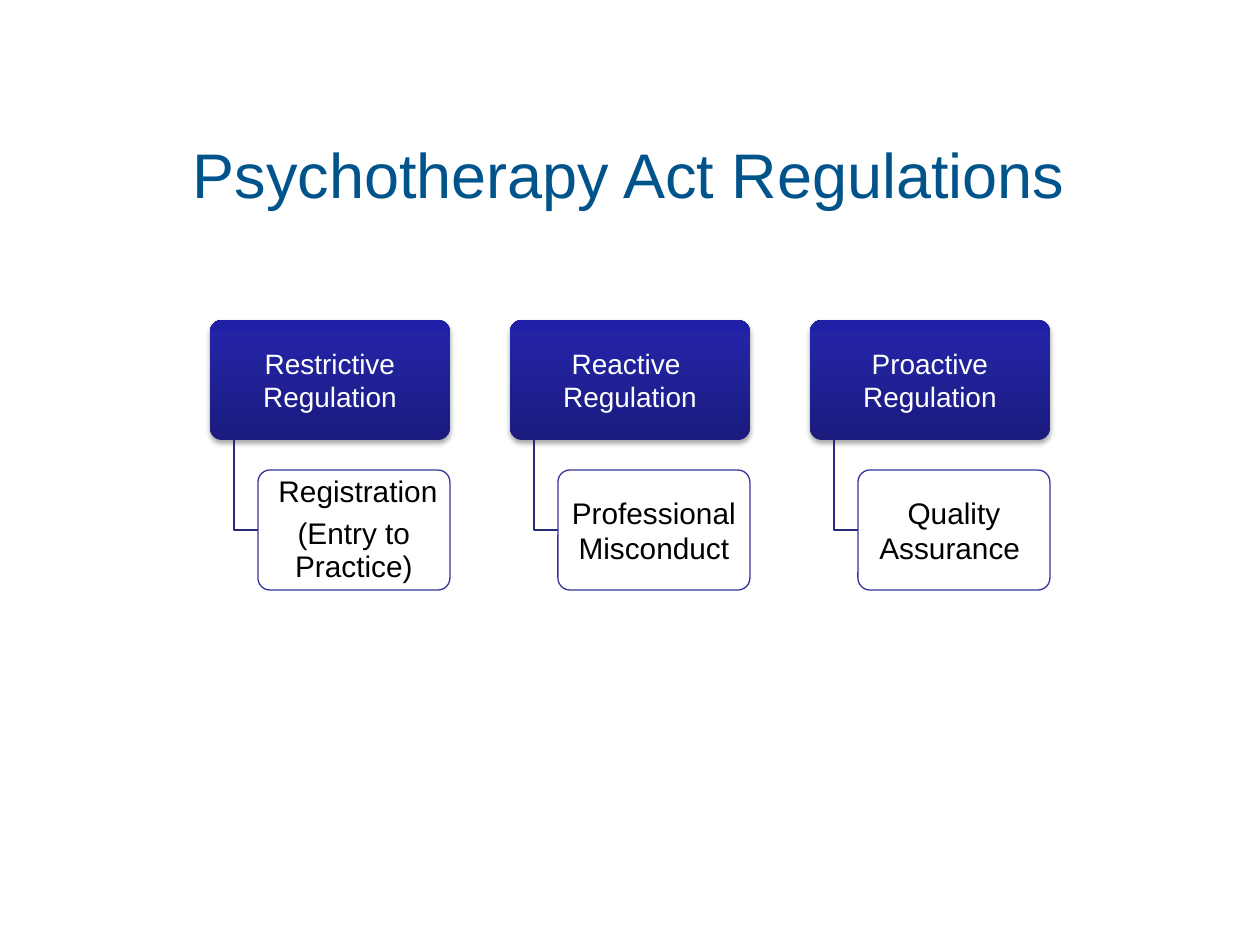
"""Build the Psychotherapy Act Regulations slide."""
from dataclasses import dataclass

from lxml import etree
from pptx import Presentation
from pptx.dml.color import RGBColor
from pptx.enum.shapes import MSO_SHAPE
from pptx.enum.text import MSO_ANCHOR, PP_ALIGN
from pptx.oxml.ns import qn
from pptx.shapes.autoshape import Shape
from pptx.slide import Slide
from pptx.text.text import TextFrame
from pptx.util import Pt

ROUNDED = MSO_SHAPE.ROUNDED_RECTANGLE
MIDDLE = MSO_ANCHOR.MIDDLE
CENTER = PP_ALIGN.CENTER

LEFT, TOP = 120, 182.86
CARD_W = 137.14
CARD_H = CARD_W / 2
COLUMN_GAP = CARD_W / 4
ROW_GAP = CARD_H / 4
INDENT = CARD_W / 5


@dataclass(frozen=True)
class Theme:
    """Fonts, sizes and colours of the slide."""
    font: str = "Arial"
    title_size: float = 36
    header_size: float = 16
    detail_size: float = 17
    title: str = "00548B"
    header_text: str = "FFFFFF"
    detail_text: str = "000000"
    detail_fill: str = "FFFFFF"
    detail_alpha: int = 90
    detail_line: str = "333399"
    elbow: str = "29297B"
    shadow: str = "000000"
    gradient: tuple[tuple[int, str], ...] = ((0, "1B1B7E"), (80, "2323A3"), (100, "2020A6"))
    line_width: float = 0.75


@dataclass(frozen=True)
class Branch:
    """A kind of regulation and the paragraphs that detail it."""
    header: str
    details: tuple[str, ...]


THEME = Theme()
BRANCHES = (
    Branch("Restrictive Regulation", (" Registration", "(Entry to Practice)")),
    Branch("Reactive \vRegulation", ("Professional Misconduct",)),
    Branch("Proactive Regulation", ("Quality Assurance ",)),
)


def format_text(tf: TextFrame, size: float, color: str) -> None:
    """Centre the text and set its font."""
    tf.word_wrap = True
    tf.vertical_anchor = MIDDLE
    for p in tf.paragraphs:
        p.alignment = CENTER
        for r in p.runs:
            r.font.name = THEME.font
            r.font.size = Pt(size)
            r.font.color.rgb = RGBColor.from_string(color)


def add_color(parent: etree._Element, color: str, alpha: int = 100) -> None:
    """Append an RGB colour with an opacity in percent."""
    clr = etree.SubElement(parent, qn("a:srgbClr"), val=color)
    etree.SubElement(clr, qn("a:alpha"), val=str(alpha * 1000))


def add_card(s: Slide, x: float, y: float, w: float, text: str) -> Shape:
    """Add a rounded card with text and no shadow."""
    sp = s.shapes.add_shape(ROUNDED, Pt(x), Pt(y), Pt(w), Pt(CARD_H))
    sp.adjustments[0] = 0.1
    sp.shadow.inherit = False
    tf = sp.text_frame
    tf.margin_left = tf.margin_right = Pt(4.5)
    tf.margin_top = tf.margin_bottom = Pt(3.5)
    tf.text = text
    return sp


def add_header(s: Slide, x: float, y: float, text: str) -> None:
    """Add a gradient header card with a soft shadow."""
    sp = add_card(s, x, y, CARD_W, text)
    format_text(sp.text_frame, THEME.header_size, THEME.header_text)
    sp.line.fill.background()
    sp.fill.gradient()
    sp.fill.gradient_angle = 90
    stops = sp.element.spPr.find(".//" + qn("a:gsLst"))
    for stop in list(stops):
        stops.remove(stop)
    for position, color in THEME.gradient:
        add_color(etree.SubElement(stops, qn("a:gs"), pos=str(position * 1000)), color)
    effects = sp.element.spPr.find(qn("a:effectLst"))
    shadow = etree.SubElement(effects, qn("a:outerShdw"), blurRad=str(Pt(3.1)),
                              dist=str(Pt(1.8)), dir="5400000", rotWithShape="0")
    add_color(shadow, THEME.shadow, 35)


def add_elbow(s: Slide, x: float, y: float) -> None:
    """Add the bent line from a header down to its detail card."""
    corner_y = y + ROW_GAP + CARD_H / 2
    builder = s.shapes.build_freeform(Pt(x), Pt(y))
    builder.add_line_segments(
        [(Pt(x), Pt(corner_y)), (Pt(x + INDENT / 2), Pt(corner_y))], close=False)
    sp = builder.convert_to_shape()
    sp.shadow.inherit = False
    sp.fill.background()
    sp.line.color.rgb = RGBColor.from_string(THEME.elbow)
    sp.line.width = Pt(THEME.line_width)


def add_detail(s: Slide, x: float, y: float, details: tuple[str, ...]) -> None:
    """Add an outlined detail card."""
    sp = add_card(s, x, y, CARD_W - INDENT, "\n".join(details))
    format_text(sp.text_frame, THEME.detail_size, THEME.detail_text)
    if len(details) > 1:
        for p in sp.text_frame.paragraphs:
            p.line_spacing = 0.9
            p.space_after = Pt(6)
    sp.fill.solid()
    sp.fill.fore_color.rgb = RGBColor.from_string(THEME.detail_fill)
    clr = sp.element.spPr.find(qn("a:solidFill")).find(qn("a:srgbClr"))
    etree.SubElement(clr, qn("a:alpha"), val=str(THEME.detail_alpha * 1000))
    sp.line.color.rgb = RGBColor.from_string(THEME.detail_line)
    sp.line.width = Pt(THEME.line_width)


def add_branch(s: Slide, x: float, branch: Branch) -> None:
    """Add one column: header, elbow and detail."""
    bottom = TOP + CARD_H
    add_header(s, x, TOP, branch.header)
    add_elbow(s, x + INDENT / 2, bottom)
    add_detail(s, x + INDENT, bottom + ROW_GAP, branch.details)


def main() -> None:
    """Build and save the presentation."""
    prs = Presentation()
    prs.slide_width, prs.slide_height = Pt(720), Pt(540)
    s = prs.slides.add_slide(prs.slide_layouts[5])
    title = s.shapes.title
    title.left, title.top, title.width, title.height = Pt(38.2), Pt(66.2), Pt(642.2), Pt(66.2)
    title.text_frame.text = "Psychotherapy Act Regulations"
    format_text(title.text_frame, THEME.title_size, THEME.title)
    for i, branch in enumerate(BRANCHES):
        add_branch(s, LEFT + i * (CARD_W + COLUMN_GAP), branch)
    prs.save("out.pptx")


if __name__ == "__main__":
    main()
